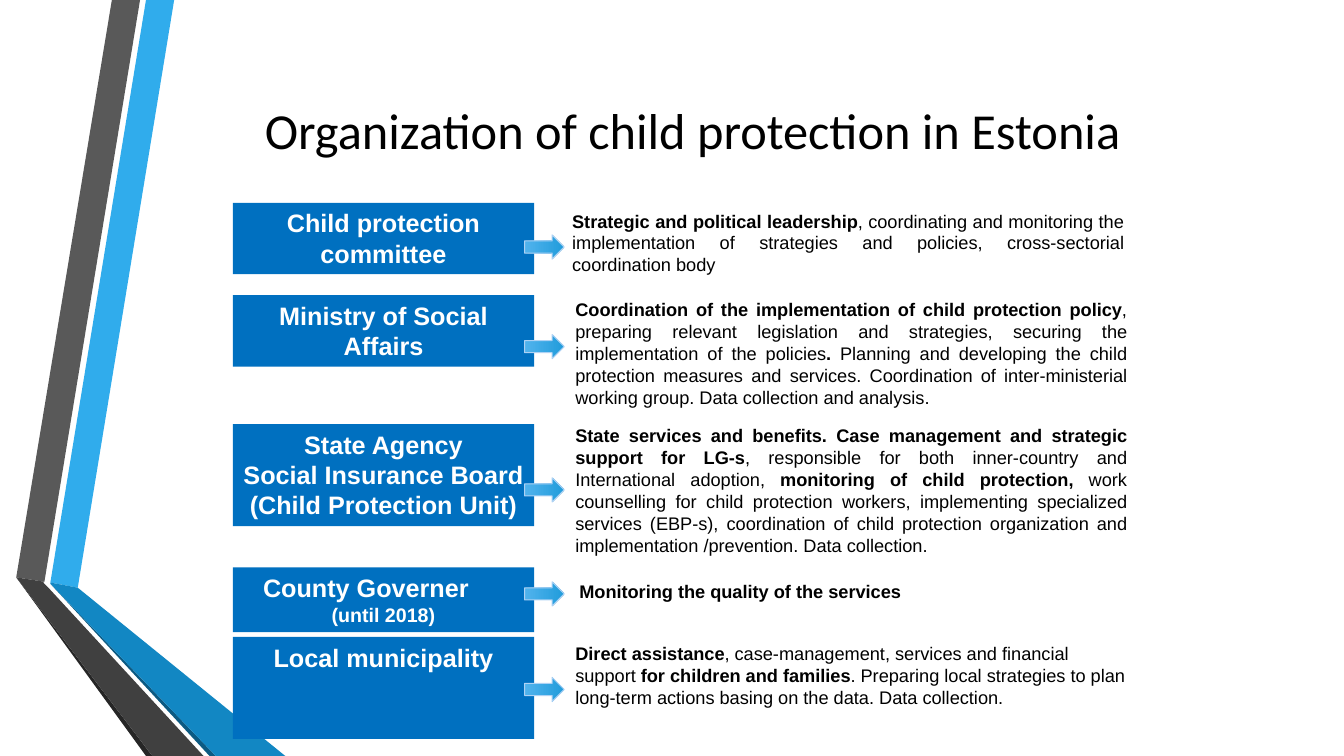
import dataclasses

import pptx
import pptx.dml.color
import pptx.enum.shapes
import pptx.enum.text
import pptx.util

Cm = pptx.util.Cm
SHAPES = pptx.enum.shapes.MSO_SHAPE
ALIGN = pptx.enum.text.PP_ALIGN
ANCHOR = pptx.enum.text.MSO_ANCHOR


@dataclasses.dataclass(frozen=True)
class Theme:
    heading_font: str = "Calibri"
    body_font: str = "Arial"
    heading_size: int = 36
    label_size: int = 18
    note_size: int = 14
    body_size: int = 13
    ink: str = "000000"
    paper: str = "FFFFFF"
    label_fill: str = "0070C0"
    arrow_start: str = "51B3ED"
    arrow_end: str = "219CDB"
    arrow_edge: str = "AED2F4"
    ribbon_blue: str = "30ACEC"
    ribbon_grey: str = "595959"
    fold_black: str = "262626"
    fold_navy: str = "0C5A82"
    fold_blue: str = "1287C3"
    fold_grey: str = "404040"


def rgb(value):
    return pptx.dml.color.RGBColor.from_string(value)


def write(paragraph, text, *, font, size, color, bold=False):
    run = paragraph.add_run()
    run.text = text
    run.font.name = font
    run.font.size = pptx.util.Pt(size)
    run.font.color.rgb = rgb(color)
    run.font.bold = bold


class ChartOfDuties:
    def __init__(self, slide, theme):
        self.shapes = slide.shapes
        self.theme = theme

    def ribbon(self, points, color):
        corners = [(Cm(x), Cm(y)) for x, y in points]
        builder = self.shapes.build_freeform(*corners[0])
        builder.add_line_segments(corners[1:], close=True)
        band = builder.convert_to_shape()
        band.shadow.inherit = False
        band.fill.solid()
        band.fill.fore_color.rgb = rgb(color)
        band.line.fill.background()

    def heading(self, text, left, top, width, height):
        frame = self.shapes.add_textbox(Cm(left), Cm(top), Cm(width), Cm(height)).text_frame
        frame.word_wrap = True
        frame.vertical_anchor = ANCHOR.MIDDLE
        frame.paragraphs[0].alignment = ALIGN.CENTER
        write(frame.paragraphs[0], text, font=self.theme.heading_font,
              size=self.theme.heading_size, color=self.theme.ink)

    def label(self, lines, top, height):
        body = self.shapes.add_shape(SHAPES.RECTANGLE, Cm(5.87), Cm(top), Cm(7.59), Cm(height))
        body.shadow.inherit = False
        body.fill.solid()
        body.fill.fore_color.rgb = rgb(self.theme.label_fill)
        body.line.fill.background()
        frame = body.text_frame
        frame.word_wrap = True
        frame.vertical_anchor = ANCHOR.TOP
        for index, (text, size, indent) in enumerate(lines):
            paragraph = frame.add_paragraph() if index else frame.paragraphs[0]
            paragraph.alignment = ALIGN.LEFT if indent else ALIGN.CENTER
            if indent:
                paragraph._p.get_or_add_pPr().set("marL", str(Cm(indent)))
            write(paragraph, text, font=self.theme.body_font, size=size,
                  color=self.theme.paper, bold=True)

    def duties(self, phrases, left, top, height, inset, alignment):
        frame = self.shapes.add_textbox(Cm(left), Cm(top), Cm(14.2), Cm(height)).text_frame
        frame.word_wrap = True
        frame.margin_left, frame.margin_right = Cm(inset), Cm(0.3 - inset)
        frame.margin_top = frame.margin_bottom = Cm(0.13)
        frame.paragraphs[0].alignment = alignment
        for index, phrase in enumerate(phrases):
            write(frame.paragraphs[0], phrase, font=self.theme.body_font,
                  size=self.theme.body_size, color=self.theme.ink, bold=index % 2 == 0)

    def arrow(self, top):
        pointer = self.shapes.add_shape(SHAPES.RIGHT_ARROW, Cm(13.22), Cm(top), Cm(1), Cm(0.61))
        pointer.shadow.inherit = False
        pointer.fill.gradient()
        pointer.fill.gradient_angle = 0
        shades = (self.theme.arrow_start, self.theme.arrow_end)
        for position, (stop, shade) in enumerate(zip(pointer.fill.gradient_stops, shades)):
            stop.position = position
            stop.color.rgb = rgb(shade)
        pointer.line.color.rgb = rgb(self.theme.arrow_edge)
        pointer.line.width = pptx.util.Pt(0.75)


def main():
    theme = Theme()
    deck = pptx.Presentation()
    deck.slide_width, deck.slide_height = Cm(33.87), Cm(19.05)
    page = ChartOfDuties(deck.slides.add_slide(deck.slide_layouts[6]), theme)

    ribbons = [
        ([(1.27, 14.68), (1.96, 14.81), (4.39, 0), (3.68, 0)], theme.ribbon_blue),
        ([(3.53, 0), (2.82, 0), (0.41, 14.55), (1.12, 14.66)], theme.ribbon_grey),
        ([(0.41, 14.55), (3.68, 19.05), (3.84, 19.05)], theme.fold_black),
        ([(1.27, 14.71), (5.28, 19.05), (5.44, 19.05)], theme.fold_navy),
        ([(1.27, 14.71), (5.44, 19.05), (7.19, 19.05), (1.96, 14.81), (1.27, 14.68)],
         theme.fold_blue),
        ([(5.13, 19.05), (1.22, 14.81), (1.09, 14.68), (1.12, 14.66), (0.41, 14.55),
          (3.84, 19.05)], theme.fold_grey),
    ]
    for points, color in ribbons:
        page.ribbon(points, color)

    page.heading("Organization of child protection in Estonia", 6.03, 2.26, 22.86, 2)

    big, small = theme.label_size, theme.note_size
    bodies = [
        ([("Child protection committee", big, 0)], 5.11, 1.8, 5.92,
         ["Strategic and political leadership",
          ", coordinating and monitoring the implementation of strategies and policies, "
          "cross-sectorial coordination body"],
         14.22, 5.16, 1.93, 0.2, ALIGN.JUSTIFY),
        ([("Ministry of Social Affairs", big, 0)], 7.44, 1.8, 8.43,
         ["Coordination of the implementation of child protection policy",
          ", preparing relevant legislation and strategies, securing the implementation "
          "of the policies", ".",
          " Planning and developing the child protection measures and services. "
          "Coordination of inter-ministerial working group. Data collection and analysis."],
         14.4, 7.39, 3.02, 0.1, ALIGN.JUSTIFY),
        ([("State Agency", big, 0), ("Social Insurance Board (Child Protection Unit)", big, 0)],
         10.69, 2.57, 12.04,
         ["State services and benefits. Case management and strategic support for LG-s",
          ", responsible for both inner-country and International adoption, ",
          "monitoring of child protection,",
          " work counselling for child protection workers, implementing specialized services "
          "(EBP-s), coordination of child protection organization and implementation "
          "/prevention. Data collection."],
         14.4, 10.57, 3.58, 0.1, ALIGN.JUSTIFY),
        ([("County Governer", big, 0.51), ("(until 2018)", small, 0)], 14.3, 1.63, 14.66,
         ["Monitoring the quality of the services"],
         14.4, 14.48, 0.81, 0.2, ALIGN.JUSTIFY),
        ([("Local municipality", big, 0)], 16.05, 2.57, 17.07,
         ["Direct assistance", ", case-management, services and financial support ",
          "for children and families",
          ". Preparing local strategies to plan long-term actions basing on the data. "
          "Data collection."],
         14.4, 16.05, 1.93, 0.1, ALIGN.LEFT),
    ]
    for lines, label_top, label_height, arrow_top, phrases, *placement in bodies:
        page.label(lines, label_top, label_height)
        page.duties(phrases, *placement)
        page.arrow(arrow_top)

    deck.save("out.pptx")


if __name__ == "__main__":
    main()
